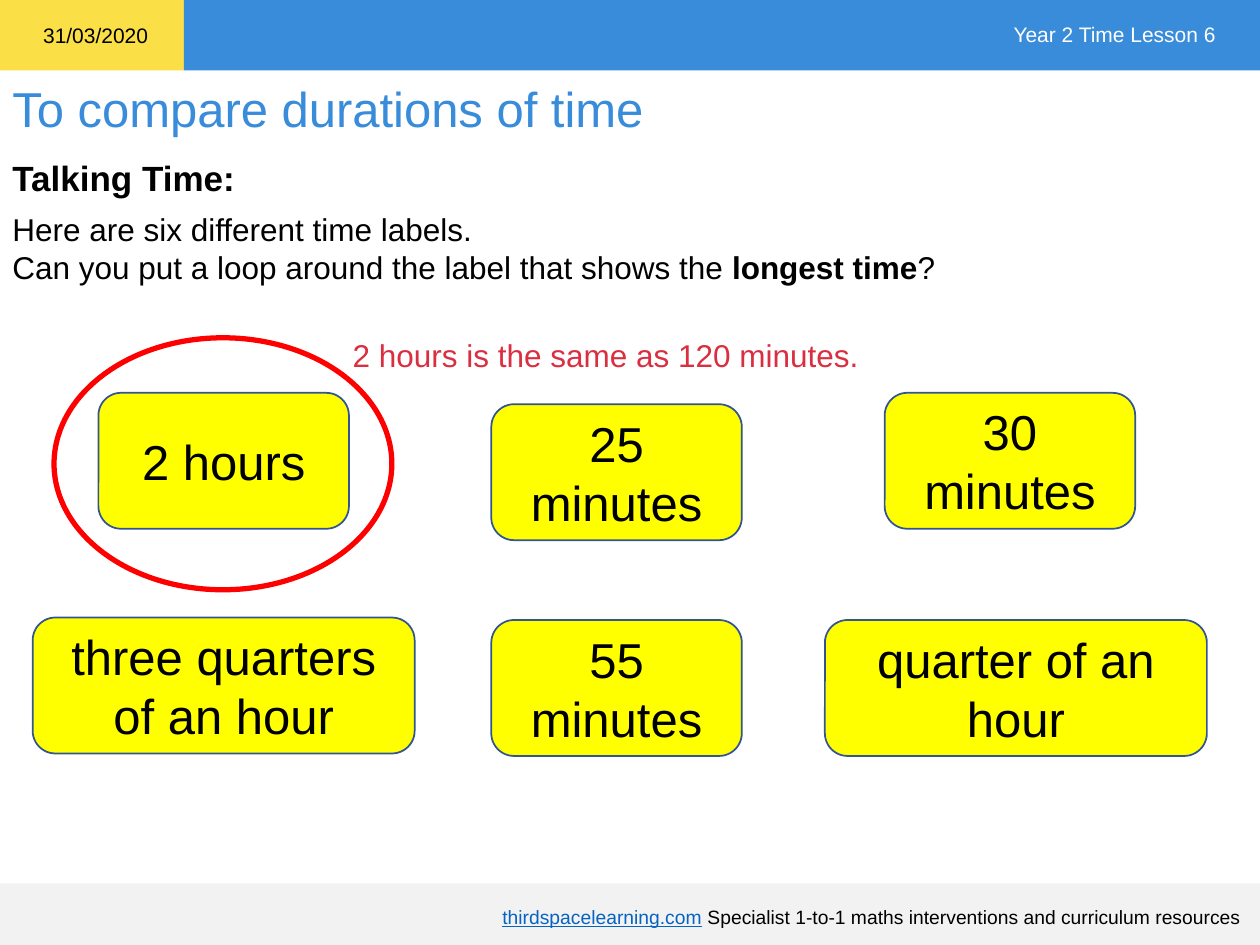
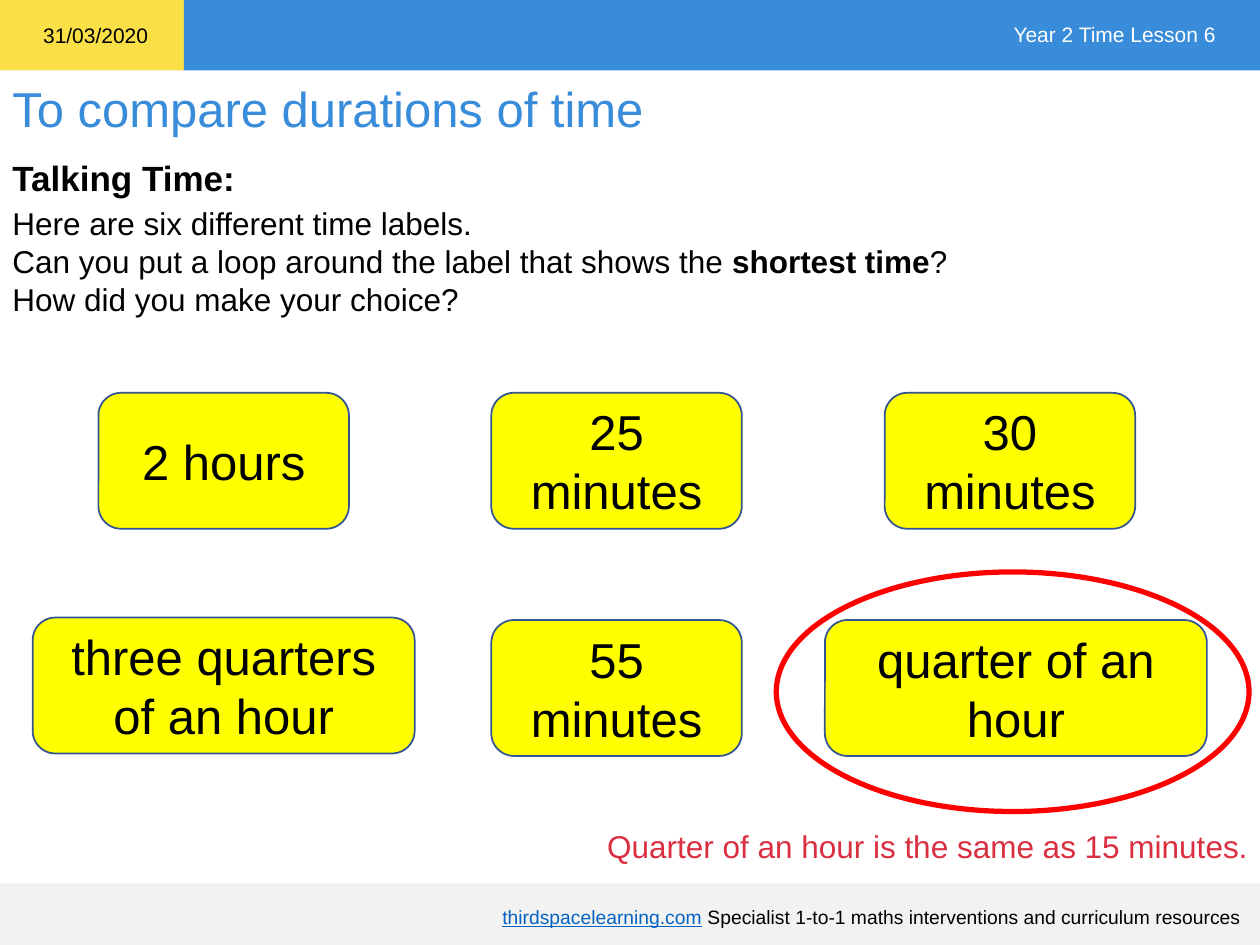
from pptx import Presentation
from pptx.dml.color import RGBColor
from pptx.enum.shapes import MSO_SHAPE
from pptx.enum.text import MSO_ANCHOR, PP_ALIGN
from pptx.util import Cm, Pt

BLACK = RGBColor(0x00, 0x00, 0x00)
WHITE = RGBColor(0xFF, 0xFF, 0xFF)
SKY_BLUE = RGBColor(0x38, 0x8C, 0xDA)
DATE_YELLOW = RGBColor(0xFA, 0xDF, 0x47)
FOOTER_GREY = RGBColor(0xF2, 0xF2, 0xF2)
LINK_BLUE = RGBColor(0x05, 0x63, 0xC1)
LABEL_YELLOW = RGBColor(0xFF, 0xFF, 0x00)
LABEL_EDGE = RGBColor(0x32, 0x54, 0x91)
LOOP_RED = RGBColor(0xFF, 0x00, 0x00)
ANSWER_RED = RGBColor(0xDA, 0x2E, 0x41)

FONT = "Arial"
PAGE_WIDTH, PAGE_HEIGHT = 25.4, 19.05
HEADER_HEIGHT, DATE_WIDTH, FOOTER_TOP = 1.42, 3.71, 17.81
LABEL_HEIGHT, SHORT_LABEL, LONG_LABEL = 2.74, 5.05, 7.7
LEFT_COLUMN, MIDDLE_COLUMN, RIGHT_COLUMN = 4.51, 12.43, 20.36
UPPER_ROW, LOWER_ROW = 7.92, 12.5


def write(frame, paragraphs, size=18, color=BLACK, bold=False,
          align=PP_ALIGN.LEFT, anchor=MSO_ANCHOR.TOP, line_spacing=None):
    """Fill a frame; each paragraph is a string or a list of (text, font changes)."""
    frame.word_wrap = True
    frame.vertical_anchor = anchor
    for index, content in enumerate(paragraphs):
        para = frame.paragraphs[0] if index == 0 else frame.add_paragraph()
        para.alignment = align
        para.line_spacing = line_spacing
        spans = [(content, {})] if isinstance(content, str) else content
        for text, changes in spans:
            span = para.add_run()
            span.text = text
            span.font.name = FONT
            span.font.size = Pt(size)
            span.font.bold = changes.get("bold", bold)
            span.font.underline = changes.get("underline", False)
            span.font.color.rgb = changes.get("color", color)


class Lesson:
    def __init__(self):
        self.deck = Presentation()
        self.deck.slide_width = Cm(PAGE_WIDTH)
        self.deck.slide_height = Cm(PAGE_HEIGHT)
        self.page = None

    def shape(self, kind, left, top, width, height, fill=None, line=None, line_width=1):
        shape = self.page.shapes.add_shape(kind, Cm(left), Cm(top), Cm(width), Cm(height))
        shape.shadow.inherit = False
        if fill is None:
            shape.fill.background()
        else:
            shape.fill.solid()
            shape.fill.fore_color.rgb = fill
        if line is None:
            shape.line.fill.background()
        else:
            shape.line.color.rgb = line
            shape.line.width = Pt(line_width)
        return shape

    def band(self, left, top, width, height, fill):
        self.shape(MSO_SHAPE.RECTANGLE, left, top, width, height, fill)

    def text(self, left, top, width, height, *paragraphs, **style):
        box = self.page.shapes.add_textbox(Cm(left), Cm(top), Cm(width), Cm(height))
        write(box.text_frame, paragraphs, **style)

    def label(self, text, center, top, width=SHORT_LABEL):
        card = self.shape(MSO_SHAPE.ROUNDED_RECTANGLE, center - width / 2, top,
                          width, LABEL_HEIGHT, LABEL_YELLOW, LABEL_EDGE)
        write(card.text_frame, [text], size=28, align=PP_ALIGN.CENTER,
              anchor=MSO_ANCHOR.MIDDLE)

    def loop(self, left, top, width, height):
        self.shape(MSO_SHAPE.OVAL, left, top, width, height, line=LOOP_RED, line_width=3)

    def answer(self, text, left, top, width):
        self.text(left, top, width, 1.02, text, color=ANSWER_RED)

    def new_page(self):
        """Start a page with the header, title, footer and heading shared by all."""
        self.page = self.deck.slides.add_slide(self.deck.slide_layouts[6])
        self.band(0, 0, DATE_WIDTH, HEADER_HEIGHT, DATE_YELLOW)
        self.band(DATE_WIDTH, 0, PAGE_WIDTH - DATE_WIDTH, HEADER_HEIGHT, SKY_BLUE)
        self.band(0, FOOTER_TOP, PAGE_WIDTH, PAGE_HEIGHT - FOOTER_TOP, FOOTER_GREY)
        self.text(1.07, 18.1, 24.2, 0.78,
                  [("thirdspacelearning.com", {"color": LINK_BLUE, "underline": True}),
                   (" Specialist 1-to-1 maths interventions and curriculum resources", {})],
                  size=11, align=PP_ALIGN.RIGHT, anchor=MSO_ANCHOR.MIDDLE)
        self.text(0, 1.45, 24.82, 1.45, "To compare durations of time",
                  size=28, color=SKY_BLUE)
        self.text(0.62, 0.33, 2.9, 0.76, "31/03/2020", size=12)
        self.text(19.5, 0.3, 5.26, 0.76, "Year 2 Time Lesson 6",
                  size=12, color=WHITE, align=PP_ALIGN.RIGHT)
        self.text(0, 2.97, 5.5, 1.12, "Talking Time:",
                  size=20, bold=True, line_spacing=1.07)

    def question(self, top, height, target, *extra_lines):
        self.text(0, top, 23.83, height,
                  "Here are six different time labels.",
                  [("Can you put a loop around the label that shows the ", {}),
                   (target, {"bold": True}), ("?", {})],
                  *extra_lines)

    def time_labels(self, second_top=UPPER_ROW):
        self.label("2 hours", LEFT_COLUMN, UPPER_ROW)
        self.label("25 minutes", MIDDLE_COLUMN, second_top)
        self.label("30 minutes", RIGHT_COLUMN, UPPER_ROW)
        self.label("55 minutes", MIDDLE_COLUMN, LOWER_ROW)
        self.label("three quarters of an hour", LEFT_COLUMN, LOWER_ROW - 0.05, LONG_LABEL)
        self.label("quarter of an hour", RIGHT_COLUMN + 0.12, LOWER_ROW, LONG_LABEL)


def main():
    lesson = Lesson()

    lesson.new_page()
    lesson.question(4.11, 1.8, "longest time")
    lesson.time_labels(second_top=8.15)
    lesson.loop(1.09, 6.81, 6.81, 5.08)
    lesson.answer("2 hours is the same as 120 minutes.", 6.86, 6.65, 11)

    lesson.new_page()
    lesson.question(3.99, 2.57, "shortest time", "How did you make your choice?")
    lesson.time_labels()
    lesson.loop(15.65, 11.53, 9.53, 4.83)
    lesson.answer("Quarter of an hour is the same as 15 minutes.", 11.99, 16.54, 13.74)

    lesson.deck.save("out.pptx")


if __name__ == "__main__":
    main()
